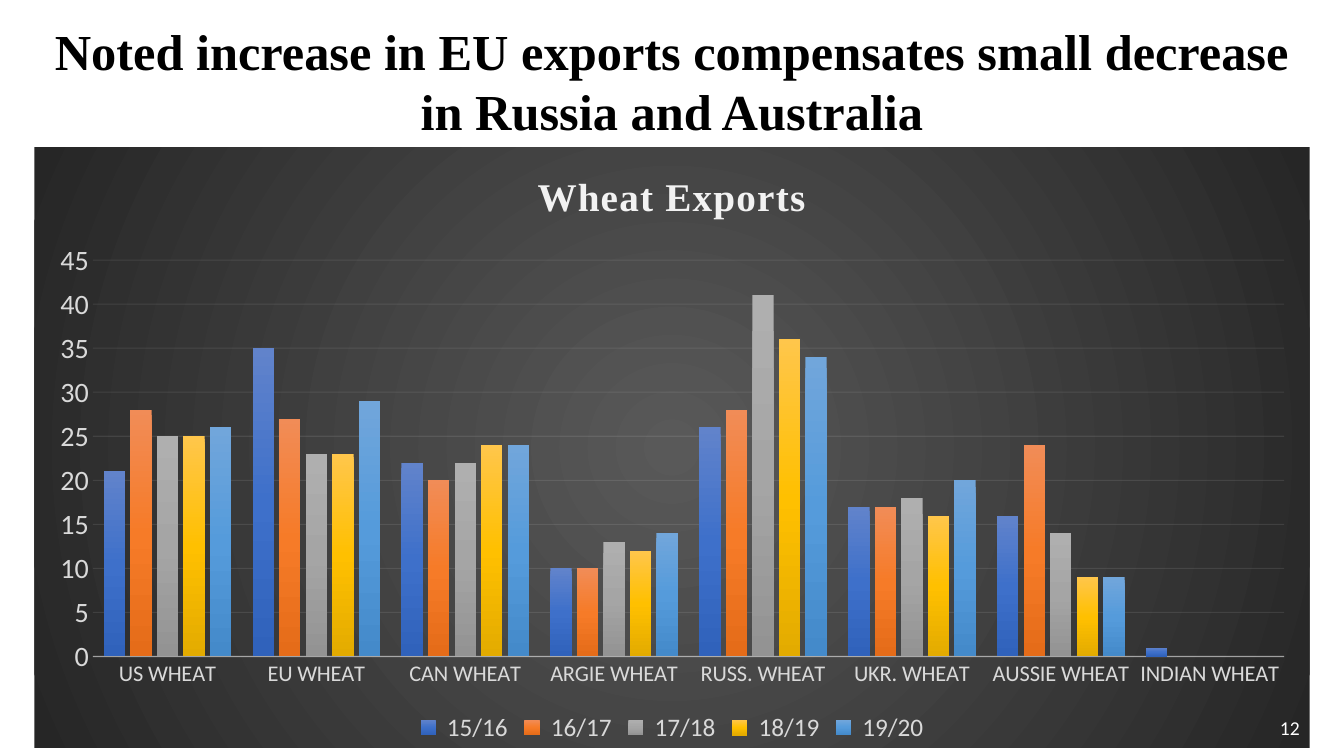
import dataclasses
import typing

import lxml.etree
import pptx
import pptx.chart.data
import pptx.dml.color
import pptx.enum.chart
import pptx.enum.text
import pptx.oxml
import pptx.oxml.ns
import pptx.util

PX = 9144  # 100 px to the inch
RGB = pptx.dml.color.RGBColor.from_string
Pt = pptx.util.Pt
qn = pptx.oxml.ns.qn
Stops = typing.Sequence[tuple[int, str]]


@dataclasses.dataclass(frozen=True)
class Theme:
    serif: str = "Times New Roman"
    sans: str = "Calibri"
    ink: str = "000000"
    white: str = "FFFFFF"
    pale: str = "F2F2F2"
    label: str = "D9D9D9"
    panel: Stops = ((0, "595959"), (100, "262626"))
    head: int = 36
    title: int = 28
    value: int = 20
    legend: int = 18
    group: int = 16
    page: int = 14


@dataclasses.dataclass(frozen=True)
class Box:
    left: int
    top: int
    width: int
    height: int

    def emu(self) -> list[int]:
        return [n * PX for n in dataclasses.astuple(self)]


@dataclasses.dataclass(frozen=True)
class Season:
    name: str
    tints: tuple[str, str, str]
    sales: tuple[int, ...]


THEME = Theme()
HEAD = Box(34, 14, 1265, 131)
CHART = Box(34, 146, 1265, 596)
PAGE = Box(999, 702, 300, 40)
GROUPS = ("US WHEAT", "EU WHEAT", "CAN WHEAT", "ARGIE WHEAT",
          "RUSS. WHEAT", "UKR. WHEAT", "AUSSIE WHEAT", "INDIAN WHEAT")
SEASONS = (
    Season(" 15/16", ("6183CB", "3E70CA", "3062BB"),
           (21, 35, 22, 10, 26, 17, 16, 1)),
    Season(" 16/17", ("F18C57", "F67B28", "E56C19"),
           (28, 27, 20, 10, 28, 17, 24, 0)),
    Season(" 17/18", ("AFAFAF", "A5A5A5", "939393"),
           (25, 23, 22, 13, 41, 18, 14, 0)),
    Season(" 18/19", ("FFC64B", "FFC000", "E3AB00"),
           (25, 23, 24, 12, 36, 16, 9, 0)),
    Season(" 19/20", ("71A6DB", "559BDB", "448ACA"),
           (26, 29, 24, 14, 34, 20, 9, 0)),
)


def style(font, size: int, color: str, face: str, bold: bool = False) -> None:
    font.size, font.name, font.bold = Pt(size), face, bold
    font.color.rgb = RGB(color)


def write(para, text: str, size: int, color: str, face: str, bold: bool = False):
    run = para.add_run()
    run.text = text
    style(run.font, size, color, face, bold)
    return run


def blend(props, stops: Stops, round: bool = False) -> None:
    """Put a gradient, straight down or round, first in a shape-properties element."""
    fill = lxml.etree.Element(qn("a:gradFill"), rotWithShape="1")
    marks = lxml.etree.SubElement(fill, qn("a:gsLst"))
    for place, color in stops:
        mark = lxml.etree.SubElement(marks, qn("a:gs"), pos=str(place * 1000))
        lxml.etree.SubElement(mark, qn("a:srgbClr"), val=color)
    if round:
        way = lxml.etree.SubElement(fill, qn("a:path"), path="circle")
        half = dict.fromkeys("ltrb", "50000")
        lxml.etree.SubElement(way, qn("a:fillToRect"), **half)
    else:
        lxml.etree.SubElement(fill, qn("a:lin"), ang="5400000", scaled="0")
    props.insert(0, fill)


def rule(line, width: float, alpha: int) -> None:
    """Draw a pale line of the given percent opacity."""
    line.width = Pt(width)
    line.color.rgb = RGB(THEME.pale)
    tint = line._get_or_add_ln().find(".//" + qn("a:srgbClr"))
    lxml.etree.SubElement(tint, qn("a:alpha"), val=str(alpha * 1000))


def place(owner, **spots: float) -> None:
    """Set a chart part's place as fractions of the chart."""
    layout = owner.find(qn("c:layout"))
    if layout is None:
        layout = owner.makeelement(qn("c:layout"))
        text = owner.find(qn("c:tx"))
        if text is None:
            owner.insert(0, layout)
        else:
            text.addnext(layout)
    manual = lxml.etree.SubElement(layout, qn("c:manualLayout"))
    if "w" in spots:
        lxml.etree.SubElement(manual, qn("c:layoutTarget"), val="inner")
    for axis in "xy":
        lxml.etree.SubElement(manual, qn(f"c:{axis}Mode"), val="edge")
    for key, value in spots.items():
        lxml.etree.SubElement(manual, qn(f"c:{key}"), val=str(value))


def add_bars(slide) -> None:
    data = pptx.chart.data.CategoryChartData(number_format="0")
    data.categories = GROUPS
    for season in SEASONS:
        data.add_series(season.name, season.sales)
    kind = pptx.enum.chart.XL_CHART_TYPE.COLUMN_CLUSTERED
    chart = slide.shapes.add_chart(kind, *CHART.emu(), data).chart
    style(chart.font, 10, THEME.ink, THEME.sans)

    root = chart._chartSpace
    back = lxml.etree.Element(qn("c:spPr"))
    blend(back, THEME.panel, round=True)
    edge = lxml.etree.SubElement(back, qn("a:ln"))
    lxml.etree.SubElement(edge, qn("a:noFill"))
    root.find(qn("c:chart")).addnext(back)

    chart.has_title = True
    title = chart.chart_title
    run = write(title.text_frame.paragraphs[0], "Wheat Exports",
                THEME.title, THEME.pale, THEME.serif, True)
    run.font._element.set("spc", "100")
    title.include_in_layout = False
    place(title._element, x=0.389, y=0.03)

    plot = chart.plots[0]
    plot.gap_width, plot.overlap, plot.vary_by_categories = 100, -24, False
    place(root.find(".//" + qn("c:plotArea")), x=0.046, y=0.188, w=0.934, h=0.66)
    for bars, season in zip(plot.series, SEASONS):
        blend(bars._element.get_or_add_spPr(), list(zip((0, 50, 100), season.tints)))

    none = pptx.enum.chart.XL_TICK_MARK.NONE
    for axis, size in ((chart.category_axis, THEME.group),
                       (chart.value_axis, THEME.value)):
        axis.major_tick_mark = axis.minor_tick_mark = none
        style(axis.tick_labels.font, size, THEME.label, THEME.sans)
    rule(chart.category_axis.format.line, 1, 54)
    scale = chart.value_axis
    scale.minimum_scale, scale.maximum_scale, scale.major_unit = 0, 45, 5
    scale.tick_labels.number_format = "0"
    scale.tick_labels.number_format_is_linked = False
    scale.format.line.fill.background()
    rule(scale.major_gridlines.format.line, 0.75, 10)

    chart.has_legend = True
    chart.legend.position = pptx.enum.chart.XL_LEGEND_POSITION.BOTTOM
    chart.legend.include_in_layout = False
    style(chart.legend.font, THEME.legend, THEME.label, THEME.sans)


def add_page(slide) -> None:
    frame = slide.shapes.add_textbox(*PAGE.emu()).text_frame
    frame.word_wrap = True
    frame.vertical_anchor = pptx.enum.text.MSO_ANCHOR.MIDDLE
    para = frame.paragraphs[0]
    para.alignment = pptx.enum.text.PP_ALIGN.RIGHT
    write(para, "12", THEME.page, THEME.white, THEME.sans)


def add_head(slide) -> None:
    head = slide.shapes.title
    head.left, head.top, head.width, head.height = HEAD.emu()
    frame = head.text_frame
    frame.word_wrap = True
    frame.auto_size = pptx.enum.text.MSO_AUTO_SIZE.NONE
    frame.vertical_anchor = pptx.enum.text.MSO_ANCHOR.MIDDLE
    para = frame.paragraphs[0]
    para.alignment = pptx.enum.text.PP_ALIGN.CENTER
    write(para, "Noted increase in EU exports compensates small decrease "
          "in Russia and Australia", THEME.head, THEME.ink, THEME.serif, True)


def main() -> None:
    deck = pptx.Presentation()
    deck.slide_width, deck.slide_height = 1333 * PX, 750 * PX
    slide = deck.slides.add_slide(deck.slide_layouts[5])
    add_bars(slide)
    add_page(slide)
    add_head(slide)
    deck.save("out.pptx")


if __name__ == "__main__":
    main()
